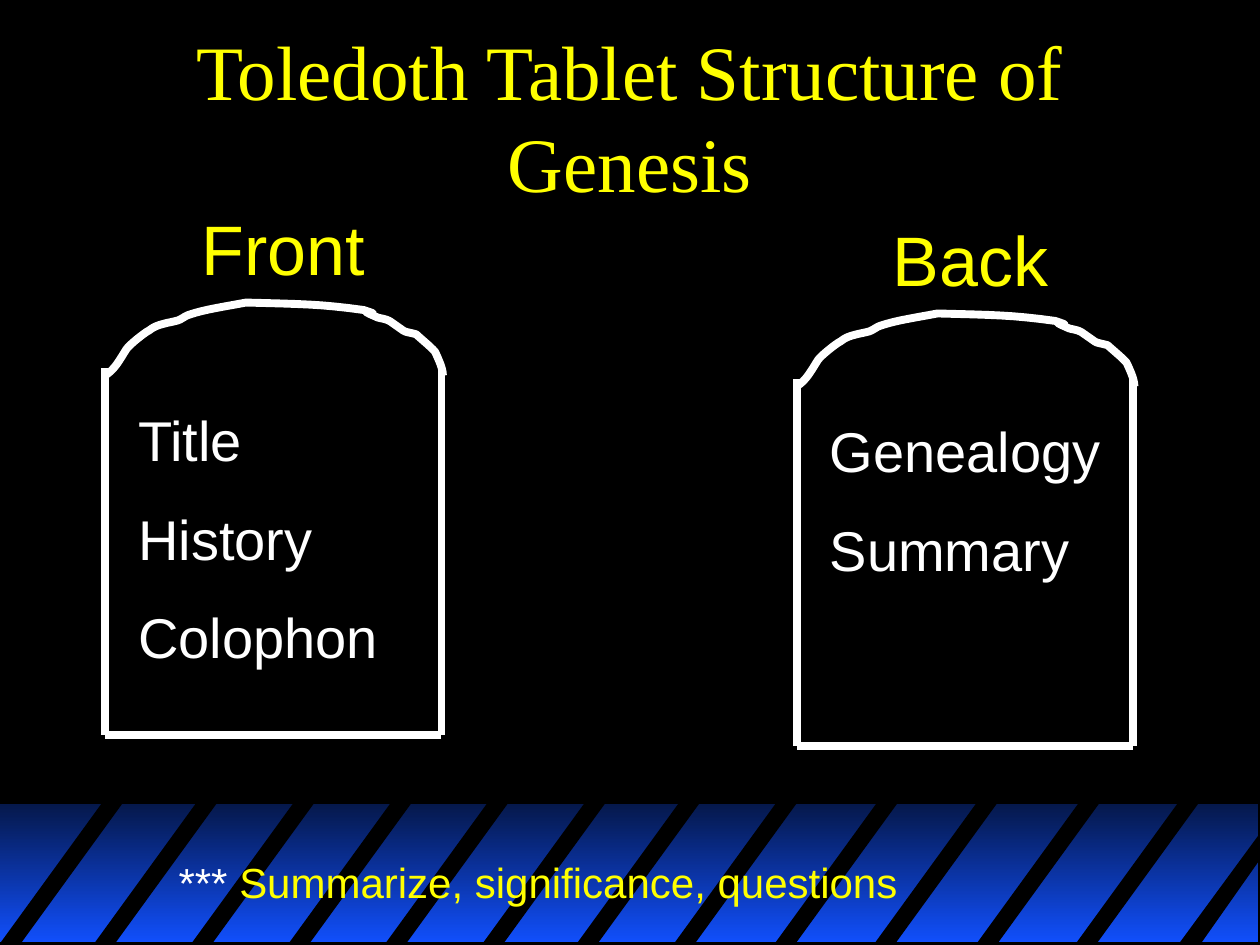
from pptx import Presentation
from pptx.dml.color import RGBColor
from pptx.enum.shapes import MSO_CONNECTOR, MSO_SHAPE
from pptx.enum.text import MSO_ANCHOR, MSO_AUTO_SIZE, PP_ALIGN
from pptx.oxml.ns import qn
from pptx.util import Cm, Pt
from lxml import etree

STRAIGHT = MSO_CONNECTOR.STRAIGHT
RECTANGLE = MSO_SHAPE.RECTANGLE
MIDDLE = MSO_ANCHOR.MIDDLE
GROW = MSO_AUTO_SIZE.SHAPE_TO_FIT_TEXT
LEFT, CENTER = PP_ALIGN.LEFT, PP_ALIGN.CENTER

COLORS = {
    "black": "000000",
    "white": "FFFFFF",
    "yellow": "FFFF00",
    "navy": "05184B",
    "blue": "114FFB",
}

STRIPE_LEFTS = [0, 1.9, 3.86, 5.82, 7.77, 9.73, 11.63, 13.59, 15.62, 17.63, 19.69, 21.69]
STRIPE_TOP, STRIPE_BOTTOM = 16.1, 19.02
STRIPE_LEAN, STRIPE_WIDTH = 2.12, 0.42

TABLET_WIDTH, SIDE_HEIGHT, ARCH_RISE = 6.78, 7.4, 1.32
ARCH_START = (0, 1.47)
ARCH_CURVES = [
    [(0.2, 1.35), (0.3, 1.14), (0.43, 0.94)],
    [(0.48, 0.86), (0.79, 0.61), (0.89, 0.56)],
    [(1.04, 0.43), (1.3, 0.41), (1.47, 0.36)],
    [(1.55, 0.33), (1.6, 0.28), (1.68, 0.25)],
    [(2.03, 0.13), (2.44, 0.08), (2.84, 0)],
    [(3.96, 0.03), (4.34, 0.03), (5.21, 0.15)],
    [(5.74, 0.33), (4.9, 0.05), (5.49, 0.3)],
    [(5.59, 0.33), (5.69, 0.33), (5.79, 0.41)],
    [(6.12, 0.64), (5.97, 0.56), (6.27, 0.64)],
    [(6.4, 0.76), (6.53, 0.86), (6.65, 0.99)],
    [(6.71, 1.12), (6.81, 1.32), (6.81, 1.47)],
]
CURVE_STEPS = 8


def color(name):
    return RGBColor.from_string(COLORS[name])


def add_text(s, box, lines, size, font, tint, align=LEFT):
    tb = s.shapes.add_textbox(*(Cm(v) for v in box))
    tf = tb.text_frame
    tf.word_wrap = True
    tf.auto_size = GROW
    tf.text = "\n".join(lines)
    for i, p in enumerate(tf.paragraphs):
        p.alignment = align
        if i:
            p.space_before = Pt(18)
        format_run(p.runs[0], size, font, tint)
    return tf


def format_run(r, size, font, tint):
    r.font.size = Pt(size)
    r.font.name = font
    r.font.color.rgb = color(tint)


def add_outline(s, points, close):
    points = [(Cm(x), Cm(y)) for x, y in points]
    builder = s.shapes.build_freeform(*points[0])
    builder.add_line_segments(points[1:], close=close)
    sp = builder.convert_to_shape()
    sp.shadow.inherit = False
    return sp


def add_stripe(s, points):
    sp = add_outline(s, points, True)
    sp.fill.solid()
    sp.fill.fore_color.rgb = color("black")
    sp.line.fill.background()


def add_band(s):
    sp = s.shapes.add_shape(RECTANGLE, 0, Cm(16.21), Cm(25.37), Cm(2.79))
    sp.shadow.inherit = False
    sp.line.fill.background()
    sp.fill.gradient()
    sp.fill.gradient_angle = 270
    for stop, name in zip(sp.fill.gradient_stops, ("navy", "blue")):
        stop.color.rgb = color(name)
    for x in STRIPE_LEFTS:
        add_stripe(s, [
            (x, STRIPE_BOTTOM),
            (x + STRIPE_LEAN, STRIPE_TOP),
            (x + STRIPE_LEAN + STRIPE_WIDTH, STRIPE_TOP),
            (x + STRIPE_WIDTH, STRIPE_BOTTOM),
        ])
    add_stripe(s, [(23.77, 19.02), (25.37, 16.84), (25.37, 17.37), (24.21, 19.02)])


def style_line(line):
    line.color.rgb = color("white")
    line.width = Pt(4.5)


def add_line(s, x1, y1, x2, y2):
    c = s.shapes.add_connector(STRAIGHT, Cm(x1), Cm(y1), Cm(x2), Cm(y2))
    style_line(c.line)
    etree.SubElement(c._element.spPr, qn("a:effectLst"))


def arch_points():
    points = [ARCH_START]
    for b, c, d in ARCH_CURVES:
        a = points[-1]
        for step in range(1, CURVE_STEPS + 1):
            t = step / CURVE_STEPS
            u = 1 - t
            points.append(tuple(
                u**3 * a[i] + 3 * u * u * t * b[i] + 3 * u * t * t * c[i] + t**3 * d[i]
                for i in range(2)
            ))
    return points


def add_tablet(s, left, top, heading, heading_left, items, items_width):
    shoulder = top + ARCH_RISE
    base = shoulder + SIDE_HEIGHT
    right = left + TABLET_WIDTH
    add_line(s, left, base, left, shoulder)
    arch = add_outline(s, [(left + x, top + y) for x, y in arch_points()], False)
    arch.fill.background()
    style_line(arch.line)
    add_line(s, right, base, right, shoulder)
    add_line(s, left, base, right, base)
    items_height = 0.8 + 1.62 * len(items)
    add_text(s, (left + 0.42, top + 1.95, items_width, items_height), items, 32, "Arial", "white")
    add_text(s, (heading_left, top - 2.08, 4.24, 1.96), [heading], 40, "Arial", "yellow")


def main():
    prs = Presentation()
    prs.slide_width, prs.slide_height = Cm(25.4), Cm(19.05)
    s = prs.slides.add_slide(prs.slide_layouts[6])
    s.background.fill.solid()
    s.background.fill.fore_color.rgb = color("black")

    add_band(s)
    tf = add_text(s, (1.9, 0.64, 21.6, 3.38), ["Toledoth Tablet Structure of Genesis"],
                  44, "Times New Roman", "yellow", CENTER)
    tf.auto_size = MSO_AUTO_SIZE.NONE
    tf.vertical_anchor = MIDDLE
    add_tablet(s, 2.12, 6.1, "Front", 3.81, ["Title", "History", "Colophon"], 5.72)
    add_tablet(s, 16.06, 6.32, "Back", 17.75, ["Genealogy", "Summary"], 6.17)
    tf = add_text(s, (3.35, 17.15, 18, 1.27), ["*** "], 24, "Arial", "white")
    r = tf.paragraphs[0].add_run()
    r.text = "Summarize, significance, questions"
    format_run(r, 24, "Arial", "yellow")

    prs.save("out.pptx")


if __name__ == "__main__":
    main()
